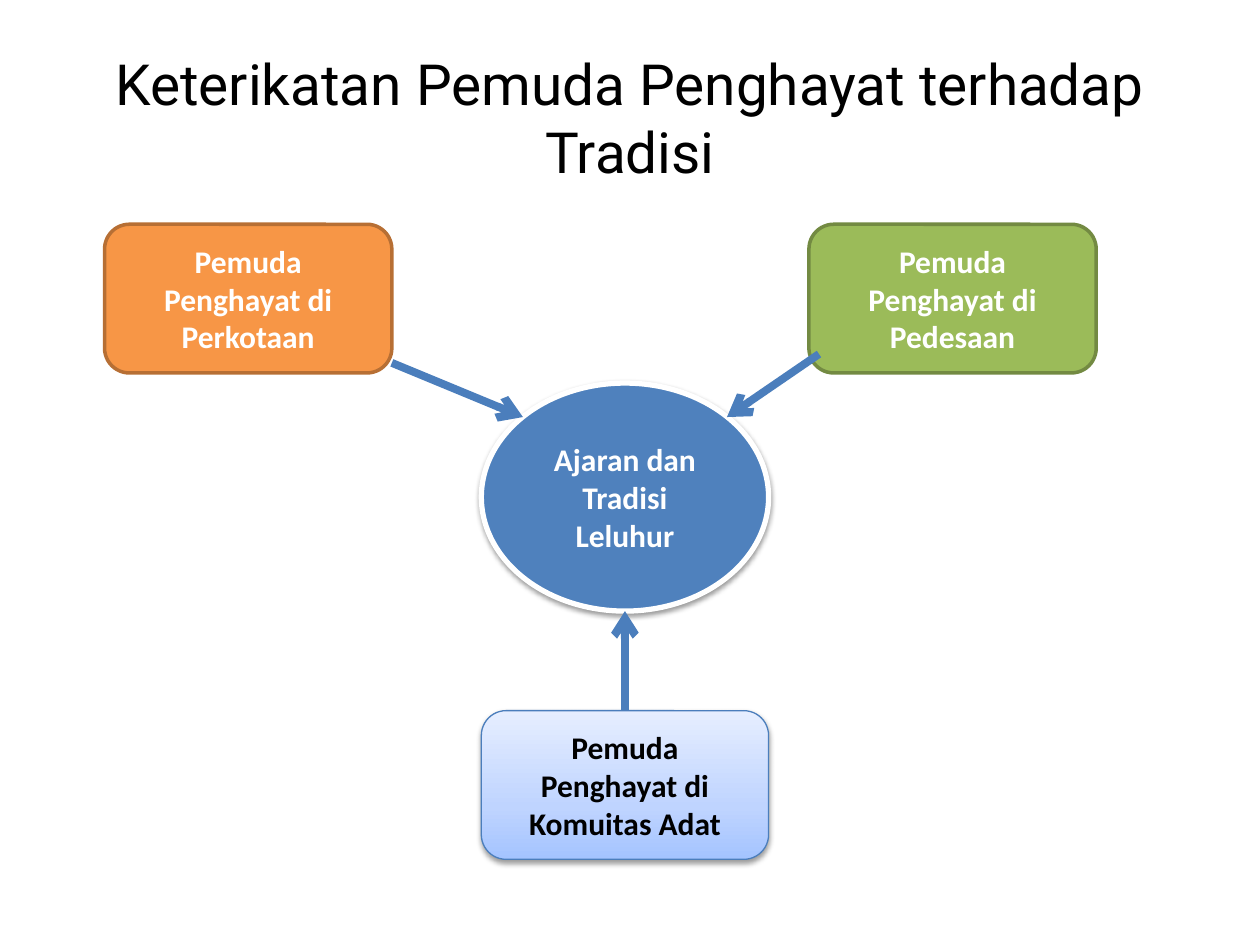
"""Build a slide showing how three youth groups relate to ancestral tradition."""
from dataclasses import dataclass
from typing import Optional

from lxml.etree import SubElement
from pptx import Presentation
from pptx.dml.color import RGBColor
from pptx.enum.shapes import MSO_CONNECTOR, MSO_SHAPE
from pptx.enum.text import MSO_ANCHOR, PP_ALIGN
from pptx.oxml.ns import qn
from pptx.util import Inches, Pt

WHITE = RGBColor(0xFF, 0xFF, 0xFF)
BLACK = RGBColor(0x00, 0x00, 0x00)
BLUE = RGBColor(0x4F, 0x81, 0xBD)
EDGE_BLUE = RGBColor(0x4B, 0x7E, 0xBC)
ORANGE = RGBColor(0xF7, 0x96, 0x46)
EDGE_ORANGE = RGBColor(0xB7, 0x6F, 0x34)
GREEN = RGBColor(0x9B, 0xBB, 0x59)
EDGE_GREEN = RGBColor(0x73, 0x8A, 0x42)
PALE_STOPS = (
    (0, RGBColor(0xA4, 0xC4, 0xFF)),
    (35, RGBColor(0xBF, 0xD4, 0xFF)),
    (100, RGBColor(0xE6, 0xEE, 0xFF)),
)
NODE_W, BOX_H, HUB_H = 2.28, 1.18, 1.81
CENTER_LEFT, TOP_ROW = 3.82, 1.78


@dataclass
class Node:
    lines: tuple[str, ...]
    left: float
    top: float
    edge: RGBColor
    edge_pt: float
    fill: Optional[RGBColor] = None
    text: RGBColor = WHITE
    height: float = BOX_H
    shape: MSO_SHAPE = MSO_SHAPE.ROUNDED_RECTANGLE
    shadow: bool = False


@dataclass
class Arrow:
    start: tuple[float, float]
    end: tuple[float, float]


HUB = Node(("Ajaran dan Tradisi", "Leluhur"), CENTER_LEFT, 3.04, WHITE, 3, BLUE,
           height=HUB_H, shape=MSO_SHAPE.OVAL, shadow=True)
URBAN = Node(("Pemuda Penghayat di Perkotaan",), 0.83, TOP_ROW, EDGE_ORANGE, 2, ORANGE)
RURAL = Node(("Pemuda Penghayat di Pedesaan",), 6.42, TOP_ROW, EDGE_GREEN, 2, GREEN)
CUSTOM = Node(("Pemuda Penghayat di Komuitas Adat",), CENTER_LEFT, 5.64, EDGE_BLUE, 0.75,
              text=BLACK, shadow=True)
MIDDLE = CENTER_LEFT + NODE_W / 2
URBAN_ARROW = Arrow((3.11, 2.88), (4.15, 3.31))
RURAL_ARROW = Arrow((6.5, 2.81), (5.77, 3.31))
CUSTOM_ARROW = Arrow((MIDDLE, CUSTOM.top), (MIDDLE, HUB.top + HUB_H))


def add_color(parent, color: RGBColor):
    return SubElement(parent, qn("a:srgbClr"), val=str(color))


def add_shadow(sp) -> None:
    effects = sp._element.spPr.find(qn("a:effectLst"))
    shadow = SubElement(effects, qn("a:outerShdw"), blurRad=str(Pt(3.1)),
                        dist=str(Pt(1.6)), dir="5400000", rotWithShape="0")
    SubElement(add_color(shadow, BLACK), qn("a:alpha"), val="38000")


def set_gradient(sp) -> None:
    sp.fill.gradient()
    sp.fill.gradient_angle = 90
    stops = sp._element.spPr.find(qn("a:gradFill")).find(qn("a:gsLst"))
    for stop in list(stops):
        stops.remove(stop)
    for percent, color in PALE_STOPS:
        add_color(SubElement(stops, qn("a:gs"), pos=str(percent * 1000)), color)


def add_node(slide, node: Node):
    sp = slide.shapes.add_shape(node.shape, Inches(node.left), Inches(node.top),
                                Inches(NODE_W), Inches(node.height))
    sp.shadow.inherit = False
    if node.shadow:
        add_shadow(sp)
    if node.fill is None:
        set_gradient(sp)
    else:
        sp.fill.solid()
        sp.fill.fore_color.rgb = node.fill
    sp.line.color.rgb = node.edge
    sp.line.width = Pt(node.edge_pt)
    tf = sp.text_frame
    tf.word_wrap = True
    tf.vertical_anchor = MSO_ANCHOR.MIDDLE
    for i, line in enumerate(node.lines):
        p = tf.add_paragraph() if i else tf.paragraphs[0]
        p.alignment = PP_ALIGN.CENTER
        r = p.add_run()
        r.text = line
        r.font.name = "Calibri"
        r.font.size = Pt(18)
        r.font.bold = True
        r.font.color.rgb = node.text
    return sp


def add_arrow(slide, arrow: Arrow):
    cx = slide.shapes.add_connector(MSO_CONNECTOR.STRAIGHT,
                                    *map(Inches, arrow.start + arrow.end))
    cx.line.color.rgb = EDGE_BLUE
    cx.line.width = Pt(4.5)
    sp_pr = cx._element.spPr
    SubElement(sp_pr.find(qn("a:ln")), qn("a:tailEnd"), type="arrow")
    SubElement(sp_pr, qn("a:effectLst"))
    return cx


def set_title(slide, text: str) -> None:
    title = slide.shapes.title
    title.left, title.top = Inches(0.5), Inches(0.3)
    title.width, title.height = Inches(9), Inches(1.25)
    tf = title.text_frame
    tf.word_wrap = True
    tf.vertical_anchor = MSO_ANCHOR.MIDDLE
    p = tf.paragraphs[0]
    p.alignment = PP_ALIGN.CENTER
    r = p.add_run()
    r.text = text
    r.font.name = "Roboto"
    r.font.size = Pt(32.4)
    r.font.color.rgb = BLACK


def main() -> None:
    prs = Presentation()
    prs.slide_width, prs.slide_height = Inches(10), Inches(7.5)
    slide = prs.slides.add_slide(prs.slide_layouts[5])
    set_title(slide, "Keterikatan Pemuda Penghayat terhadap Tradisi")
    for node in (HUB, URBAN, RURAL):
        add_node(slide, node)
    add_arrow(slide, URBAN_ARROW)
    custom = add_node(slide, CUSTOM)
    add_arrow(slide, CUSTOM_ARROW).begin_connect(custom, 0)
    add_arrow(slide, RURAL_ARROW)
    prs.save("out.pptx")


if __name__ == "__main__":
    main()
